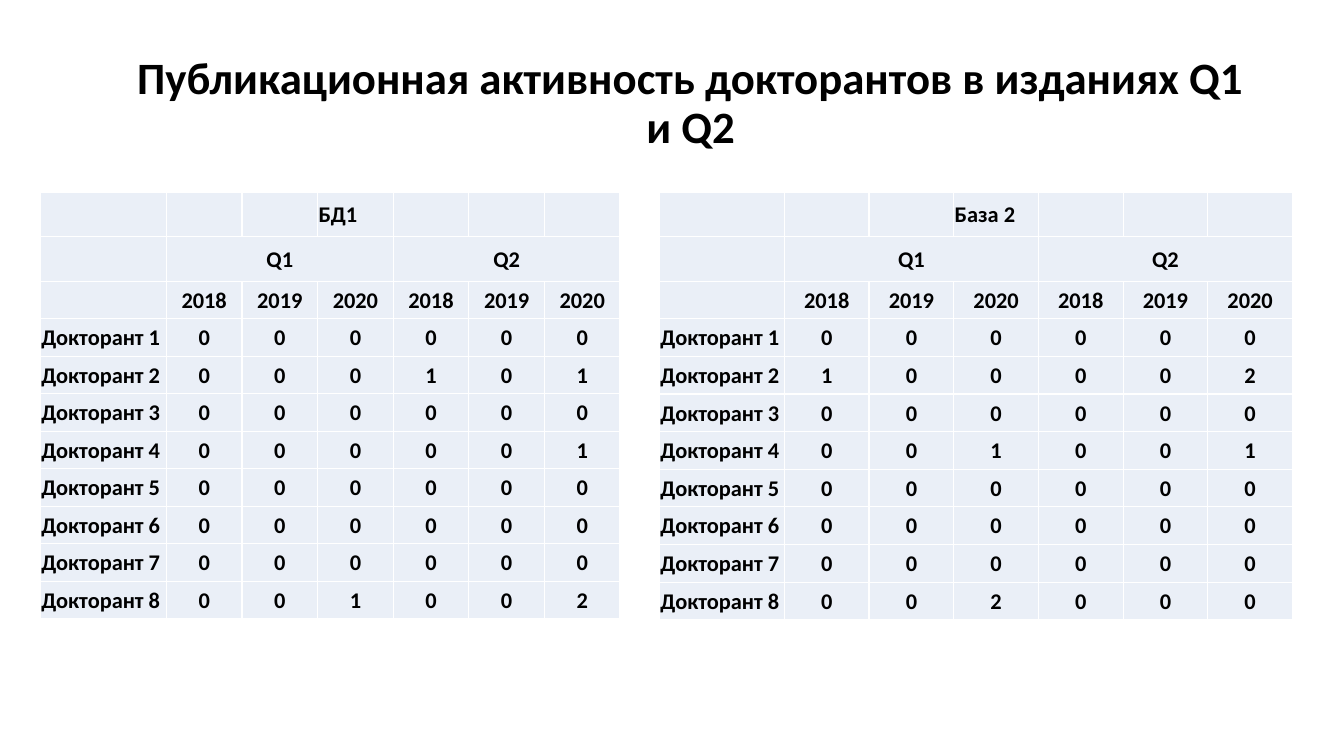
from lxml.etree import SubElement
from pptx import Presentation
from pptx.dml.color import RGBColor
from pptx.enum.text import MSO_ANCHOR as ANCHOR, PP_ALIGN as ALIGN
from pptx.oxml.ns import qn
from pptx.util import Inches, Pt

BLACK = RGBColor(0x00, 0x00, 0x00)
WHITE = RGBColor(0xFF, 0xFF, 0xFF)
PALE_BLUE = RGBColor(0xEA, 0xEF, 0xF7)
FONT = "Calibri"

YEARS = ["2018", "2019", "2020"]
QUARTILES = ["Q1", "Q2"]
FIRST_SCORES = ["000000", "000101", "000000", "000001",
                "000000", "000000", "000000", "001002"]
SECOND_SCORES = ["000000", "100002", "000000", "001001",
                 "000000", "000000", "000000", "002000"]
TABLE_TOP = 1.91
HEAD_ROW = 0.44
HEAD_ROWS = 2


def write(tf, text, size=16, align=ALIGN.CENTER, spacing=None):
    p = tf.paragraphs[0]
    p.alignment = align
    p.line_spacing = spacing
    r = p.add_run()
    r.text = text
    r.font.name = FONT
    r.font.size = Pt(size)
    r.font.bold = True
    r.font.color.rgb = BLACK


def add_borders(cell, color=WHITE, width=1):
    tc_pr = cell._tc.get_or_add_tcPr()
    for side in ("a:lnL", "a:lnR", "a:lnT", "a:lnB"):
        ln = SubElement(tc_pr, qn(side), w=str(Pt(width)))
        fill = SubElement(ln, qn("a:solidFill"))
        SubElement(fill, qn("a:srgbClr"), val=str(color))


def format_cell(cell):
    add_borders(cell)
    cell.fill.solid()
    cell.fill.fore_color.rgb = PALE_BLUE
    cell.vertical_anchor = ANCHOR.MIDDLE
    cell.margin_left = cell.margin_right = cell.margin_top = Inches(0.01)
    cell.margin_bottom = 0


def table_rows(database, scores):
    gap = [""] * (len(YEARS) - 1)
    rows = [["", "", "", database, "", "", ""],
            [""] + [text for q in QUARTILES for text in [q] + gap],
            [""] + YEARS * len(QUARTILES)]
    return rows + [[f"Докторант {n}", *score]
                   for n, score in enumerate(scores, 1)]


def add_scores(slide, database, scores, left, name_width, score_width, height):
    rows = table_rows(database, scores)
    n_rows, n_cols = len(rows), len(rows[0])
    width = name_width + (n_cols - 1) * score_width
    sp = slide.shapes.add_table(n_rows, n_cols, Inches(left), Inches(TABLE_TOP),
                                Inches(width), Inches(height))
    table = sp.table
    table.first_row = table.horz_banding = False
    for c, column in enumerate(table.columns):
        column.width = Inches(score_width if c else name_width)
    body_row = (height - HEAD_ROWS * HEAD_ROW) / (n_rows - HEAD_ROWS)
    for r, row in enumerate(table.rows):
        row.height = Inches(HEAD_ROW if r < HEAD_ROWS else body_row)
        for c, cell in enumerate(row.cells):
            format_cell(cell)
            if rows[r][c]:
                left_aligned = r == 0 or c == 0
                write(cell.text_frame, rows[r][c],
                      align=ALIGN.LEFT if left_aligned else ALIGN.CENTER)
    for first in range(1, n_cols, len(YEARS)):
        table.cell(1, first).merge(table.cell(1, first + len(YEARS) - 1))


def add_title(slide, text):
    sp = slide.shapes.title
    sp.left, sp.top = Inches(1.1), Inches(0.56)
    sp.width, sp.height = Inches(11.5), Inches(0.95)
    tf = sp.text_frame
    tf.word_wrap = True
    tf.vertical_anchor = ANCHOR.MIDDLE
    write(tf, text, size=32, spacing=0.9)


def main():
    prs = Presentation()
    prs.slide_width, prs.slide_height = Inches(13.33), Inches(7.5)
    slide = prs.slides.add_slide(prs.slide_layouts[5])
    add_scores(slide, "БД1", FIRST_SCORES, left=0.4,
               name_width=1.25, score_width=0.75, height=4.23)
    add_scores(slide, "База 2", SECOND_SCORES, left=6.54,
               name_width=1.24, score_width=0.84, height=4.24)
    add_title(slide, "Публикационная активность докторантов в изданиях Q1 и Q2")
    prs.save("out.pptx")


if __name__ == "__main__":
    main()
